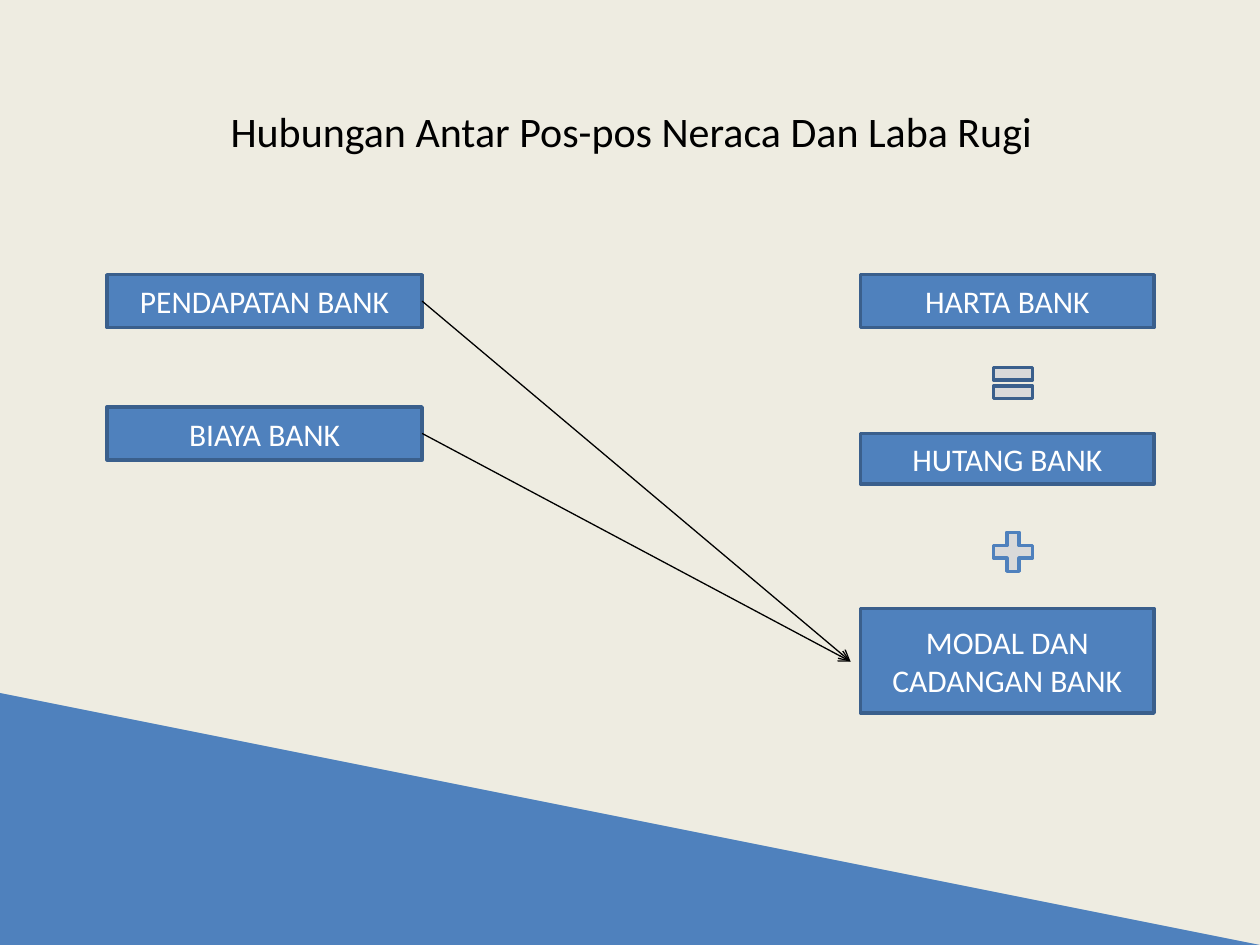
from dataclasses import dataclass
from typing import Optional

from lxml import etree
from pptx import Presentation
from pptx import util as u
from pptx.dml.color import RGBColor
from pptx.enum import shapes, text
from pptx.oxml.ns import qn


@dataclass(frozen=True)
class Theme:
    font: str = "Calibri"
    background: str = "EEECE1"
    blue: str = "4F81BD"
    outline: str = "3A5F8C"
    sign: str = "D9D9D9"
    ink: str = "000000"
    label: str = "FFFFFF"
    title_size: float = 24
    label_size: float = 18
    border: float = 2
    arrow: float = 0.75


@dataclass(frozen=True)
class Part:
    kind: shapes.MSO_SHAPE
    left: float
    top: float
    width: float
    height: float
    fill: str
    outline: Optional[str] = None
    label: str = ""


THEME = Theme()
KIND = shapes.MSO_SHAPE


def account(label: str, left: float, top: float, width: float, height: float) -> Part:
    return Part(KIND.RECTANGLE, left, top, width, height, THEME.blue, THEME.outline, label)


def income_account(label: str, top: float) -> Part:
    return account(label, 0.85, top, 2.5, 0.42)


def balance_account(label: str, top: float, height: float) -> Part:
    return account(label, 6.83, top, 2.33, height)


def sign(kind: shapes.MSO_SHAPE, top: float, outline: str) -> Part:
    return Part(kind, 7.83, top, 0.42, 0.42, THEME.sign, outline)


INCOME = [income_account("PENDAPATAN BANK", 2.18), income_account("BIAYA BANK", 3.23)]
BALANCE = [
    balance_account("HARTA BANK", 2.18, 0.42),
    balance_account("HUTANG BANK", 3.44, 0.4),
    balance_account("MODAL DAN CADANGAN BANK", 4.83, 0.83),
]
WEDGE = Part(KIND.RIGHT_TRIANGLE, 0, 5.5, 10, 2, THEME.blue)
SIGNS = [
    sign(KIND.MATH_EQUAL, 2.83, THEME.outline),
    sign(KIND.MATH_PLUS, 4.17, THEME.blue),
]
CAPITAL_ENTRY = (6.75, 5.25)


def rgb(value: str) -> RGBColor:
    return RGBColor.from_string(value)


def write(frame, words: str, size: float, color: str) -> None:
    frame.word_wrap = True
    frame.vertical_anchor = text.MSO_ANCHOR.MIDDLE
    paragraph = frame.paragraphs[0]
    paragraph.alignment = text.PP_ALIGN.CENTER
    run = paragraph.add_run()
    run.text = words
    run.font.name = THEME.font
    run.font.size = u.Pt(size)
    run.font.color.rgb = rgb(color)


def draw_part(slide, part: Part):
    shape = slide.shapes.add_shape(
        part.kind, u.Inches(part.left), u.Inches(part.top),
        u.Inches(part.width), u.Inches(part.height))
    shape.shadow.inherit = False
    shape.fill.solid()
    shape.fill.fore_color.rgb = rgb(part.fill)
    if part.outline:
        shape.line.color.rgb = rgb(part.outline)
        shape.line.width = u.Pt(THEME.border)
    else:
        shape.line.fill.background()
    if part.label:
        write(shape.text_frame, part.label, THEME.label_size, THEME.label)
    return shape


def draw_arrow(slide, source, end: tuple[float, float]) -> None:
    x, y = (u.Inches(value) for value in end)
    arrow = slide.shapes.add_connector(shapes.MSO_CONNECTOR.STRAIGHT, 0, 0, x, y)
    arrow.begin_connect(source, 3)
    arrow.line.color.rgb = rgb(THEME.ink)
    arrow.line.width = u.Pt(THEME.arrow)
    etree.SubElement(arrow.line._get_or_add_ln(), qn("a:tailEnd"), type="arrow")
    etree.SubElement(arrow._element.spPr, qn("a:effectLst"))


def main() -> None:
    deck = Presentation()
    deck.slide_width, deck.slide_height = u.Inches(10), u.Inches(7.5)
    slide = deck.slides.add_slide(deck.slide_layouts[5])
    slide.background.fill.solid()
    slide.background.fill.fore_color.rgb = rgb(THEME.background)

    # Title
    title = slide.shapes.title
    title.left, title.top = u.Inches(0.9), u.Inches(0.4)
    title.width, title.height = u.Inches(8.22), u.Inches(1.27)
    write(title.text_frame, "Hubungan Antar Pos-pos Neraca Dan Laba Rugi",
          THEME.title_size, THEME.ink)

    # Income and balance sheet accounts
    income_boxes = [draw_part(slide, part) for part in INCOME]
    for part in BALANCE:
        draw_part(slide, part)

    # Income and costs flow into capital
    for box in income_boxes:
        draw_arrow(slide, box, CAPITAL_ENTRY)

    # Bottom wedge and the signs of the balance equation
    for part in [WEDGE, *SIGNS]:
        draw_part(slide, part)

    deck.save("out.pptx")


if __name__ == "__main__":
    main()
